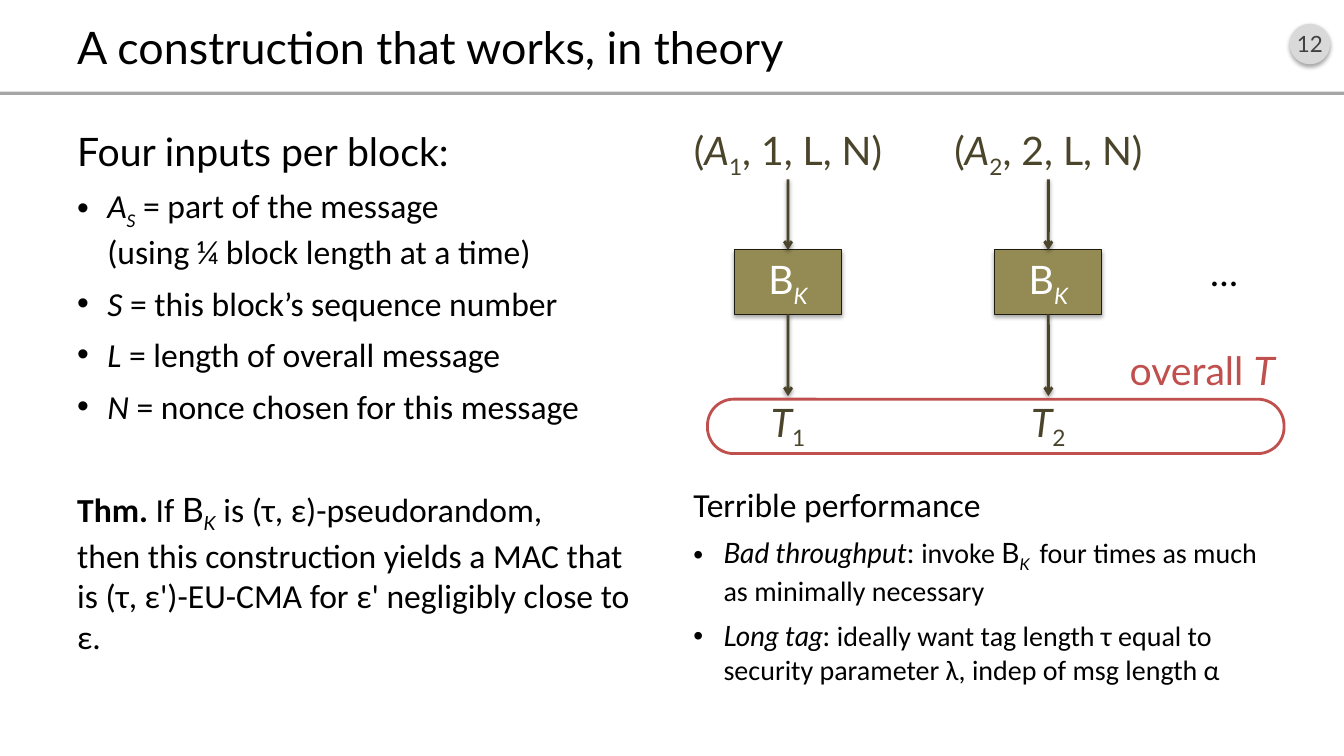
from copy import deepcopy
from dataclasses import dataclass

from lxml.etree import SubElement
from pptx import Presentation
from pptx.dml.color import RGBColor
from pptx.enum.shapes import MSO_CONNECTOR, MSO_SHAPE
from pptx.enum.text import MSO_ANCHOR, MSO_AUTO_SIZE, PP_ALIGN
from pptx.oxml.ns import qn
from pptx.shapes.autoshape import Shape
from pptx.shapes.base import BaseShape
from pptx.shapes.connector import Connector
from pptx.slide import Slide
from pptx.text.text import TextFrame
from pptx.util import Cm, Pt

BLACK, WHITE, OLIVE, DARK_OLIVE, RED = "000000", "FFFFFF", "948A54", "4A452A", "C0504D"
TOP, BOTTOM = 0, 2


@dataclass(frozen=True)
class Span:
    text: str
    italic: bool = False
    subscript: bool = False
    bold: bool = False
    font: str | None = None


@dataclass(frozen=True)
class Text:
    spans: list[Span]
    size: float = 28
    font: str = "Lato"
    color: str = BLACK
    align: PP_ALIGN = PP_ALIGN.LEFT
    before: float = 0
    bullet: bool = False


@dataclass(frozen=True)
class Box:
    left: float
    top: float
    width: float
    height: float

    def lengths(self) -> tuple[Cm, Cm, Cm, Cm]:
        return Cm(self.left), Cm(self.top), Cm(self.width), Cm(self.height)


@dataclass(frozen=True)
class Block:
    number: int
    center: float


BLOCKS = [Block(number, 19.86 + 6.56 * (number - 1)) for number in (1, 2)]


def bullet_item(*spans: Span, size: float = 24) -> Text:
    return Text(list(spans), size, "Calibri", before=8, bullet=True)


INPUTS = [
    Text([Span("Four inputs per block:")], before=8),
    bullet_item(
        Span("A", italic=True),
        Span("S", italic=True, subscript=True),
        Span(" = part of the message\n(using ¼ block length at a time)"),
    ),
    bullet_item(Span("S", italic=True), Span(" = this block’s sequence number")),
    bullet_item(Span("L", italic=True), Span(" = length of overall message")),
    bullet_item(Span("N", italic=True), Span(" = nonce chosen for this message")),
    Text([
        Span("Thm. ", bold=True),
        Span("If "),
        Span("B", font="Lato"),
        Span("K", italic=True, subscript=True, font="Lato"),
        Span(" is (τ, ε)-pseudorandom,\nthen this construction yields a MAC that "
             "is (τ, ε')-EU-CMA for ε' negligibly close to ε."),
    ], 24, "Calibri", before=45),
]

PERFORMANCE = [
    Text([Span("Terrible performance")], 24, "Calibri", before=8),
    bullet_item(
        Span("Bad throughput", italic=True, font="Lato"),
        Span(": ", font="Lato"),
        Span("invoke "),
        Span("B", font="Lato"),
        Span("K ", italic=True, subscript=True, font="Lato"),
        Span(" four times as much as minimally necessary"),
        size=20,
    ),
    bullet_item(
        Span("Long tag", italic=True, font="Lato"),
        Span(": ", font="Lato"),
        Span("ideally want tag length τ equal to security parameter λ, indep of msg length α"),
        size=20,
    ),
]


def rgb(color: str) -> RGBColor:
    return RGBColor.from_string(color)


def write(text_frame: TextFrame, texts: list[Text], anchor: MSO_ANCHOR = MSO_ANCHOR.TOP) -> None:
    text_frame.word_wrap = True
    text_frame.auto_size = MSO_AUTO_SIZE.NONE
    text_frame.vertical_anchor = anchor
    for index, text in enumerate(texts):
        paragraph = text_frame.add_paragraph() if index else text_frame.paragraphs[0]
        paragraph.alignment = text.align
        paragraph.space_before = Pt(text.before)
        properties = paragraph._p.get_or_add_pPr()
        properties.set("marL", str(Cm(0.76) if text.bullet else 0))
        properties.set("indent", str(-Cm(0.76) if text.bullet else 0))
        if text.bullet:
            SubElement(properties, qn("a:buFont"), typeface="Arial")
            SubElement(properties, qn("a:buChar"), char="•")
        else:
            SubElement(properties, qn("a:buNone"))
        for span in text.spans:
            for line_number, line in enumerate(span.text.split("\n")):
                if line_number:
                    paragraph.add_line_break()
                    paragraph._p[-1].append(deepcopy(run._r.rPr))
                run = paragraph.add_run()
                run.text = line
                run.font.name = span.font or text.font
                run.font.size = Pt(text.size)
                run.font.bold = span.bold
                run.font.italic = span.italic
                run.font.color.rgb = rgb(text.color)
                if span.subscript:
                    run._r.get_or_add_rPr().set("baseline", "-25000")


def cast_shadow(shape: Shape | Connector, opacity: int, distance: float) -> None:
    properties = shape._element.spPr
    effects = properties.find(qn("a:effectLst"))
    if effects is None:
        effects = SubElement(properties, qn("a:effectLst"))
    shadow = SubElement(effects, qn("a:outerShdw"), blurRad=str(Pt(3.1)),
                        dist=str(Pt(distance)), dir="5400000", rotWithShape="0")
    color = SubElement(shadow, qn("a:srgbClr"), val=BLACK)
    SubElement(color, qn("a:alpha"), val=str(opacity * 1000))


def add_shape(slide: Slide, kind: MSO_SHAPE, box: Box, fill: str | None = None,
              line: str | None = None, line_width: float = 0.75) -> Shape:
    shape = slide.shapes.add_shape(kind, *box.lengths())
    shape.shadow.inherit = False
    if fill:
        shape.fill.solid()
        shape.fill.fore_color.rgb = rgb(fill)
    else:
        shape.fill.background()
    if line:
        shape.line.color.rgb = rgb(line)
        shape.line.width = Pt(line_width)
    else:
        shape.line.fill.background()
    return shape


def add_label(slide: Slide, box: Box, text: Text) -> Shape:
    label = slide.shapes.add_textbox(*box.lengths())
    write(label.text_frame, [text])
    return label


def add_arrow(slide: Slide, x: float, start: float, end: float) -> Connector:
    arrow = slide.shapes.add_connector(MSO_CONNECTOR.STRAIGHT, Cm(x), Cm(start), Cm(x), Cm(end))
    arrow.line.color.rgb = rgb(DARK_OLIVE)
    arrow.line.width = Pt(2)
    SubElement(arrow.line._get_or_add_ln(), qn("a:tailEnd"), type="arrow")
    cast_shadow(arrow, 38, 1.6)
    return arrow


def add_block(slide: Slide, block: Block) -> None:
    number, center = str(block.number), block.center
    cipher = add_shape(slide, MSO_SHAPE.RECTANGLE, Box(center - 1.35, 6.3, 2.7, 1.62), OLIVE, "1E1C11")
    cast_shadow(cipher, 35, 1.8)
    cipher_name = [Span("B"), Span("K", italic=True, subscript=True)]
    write(cipher.text_frame, [Text(cipher_name, color=WHITE, align=PP_ALIGN.CENTER)], MSO_ANCHOR.MIDDLE)
    add_arrow(slide, center, 4.52, 6.3).end_connect(cipher, TOP)
    add_arrow(slide, center, 7.92, 9.98).begin_connect(cipher, BOTTOM)
    input_spans = [Span("("), Span("A", italic=True), Span(number, subscript=True), Span(f", {number}, L, N)")]
    tag_spans = [Span("T", italic=True), Span(number, subscript=True)]
    for spans, top, width in ((input_spans, 3.06, 5.6), (tag_spans, 9.9, 4.12)):
        add_label(slide, Box(center - width / 2, top, width, 1.45),
                  Text(spans, color=DARK_OLIVE, align=PP_ALIGN.CENTER))


def fill_placeholder(placeholder: BaseShape, box: Box, texts: list[Text], anchor: MSO_ANCHOR) -> None:
    placeholder.left, placeholder.top, placeholder.width, placeholder.height = box.lengths()
    write(placeholder.text_frame, texts, anchor)


def main() -> None:
    presentation = Presentation()
    presentation.slide_width, presentation.slide_height = Cm(33.87), Cm(19.05)
    slide = presentation.slides.add_slide(presentation.slide_layouts[3])
    title, inputs, performance = slide.placeholders
    fill_placeholder(title, Box(1.69, 0.41, 30.48, 1.52),
                     [Text([Span("A construction that works, in theory")], 32)], MSO_ANCHOR.MIDDLE)
    fill_placeholder(inputs, Box(1.69, 3.07, 14.96, 14.6), INPUTS, MSO_ANCHOR.TOP)
    fill_placeholder(performance, Box(17.22, 12.07, 14.96, 5.61), PERFORMANCE, MSO_ANCHOR.TOP)

    add_shape(slide, MSO_SHAPE.RECTANGLE, Box(0, 2.31, 33.87, 0.08), "A6A6A6")
    page_badge = add_shape(slide, MSO_SHAPE.OVAL, Box(32.5, 0.6, 1.02, 1.02), "D9D9D9")
    cast_shadow(page_badge, 35, 1.8)
    page_badge.text_frame.margin_left = page_badge.text_frame.margin_right = 0
    write(page_badge.text_frame, [Text([Span("12")], 16, color="404040", align=PP_ALIGN.CENTER)],
          MSO_ANCHOR.MIDDLE)

    for block in BLOCKS:
        add_block(slide, block)
    more_blocks = add_label(slide, Box(30.28, 6.1, 1.27, 1.45),
                            Text([Span("…", italic=True)], font="Calibri"))
    more_blocks.text_frame.word_wrap = False

    overall_tag = add_shape(slide, MSO_SHAPE.ROUNDED_RECTANGLE, Box(17.83, 10.06, 14.53, 1.37), None, RED, 2)
    overall_tag.adjustments[0] = 0.48
    add_label(slide, Box(27.53, 8.61, 4.85, 1.45),
              Text([Span("overall "), Span("T", italic=True)], color=RED, align=PP_ALIGN.RIGHT))
    presentation.save("out.pptx")


if __name__ == "__main__":
    main()
